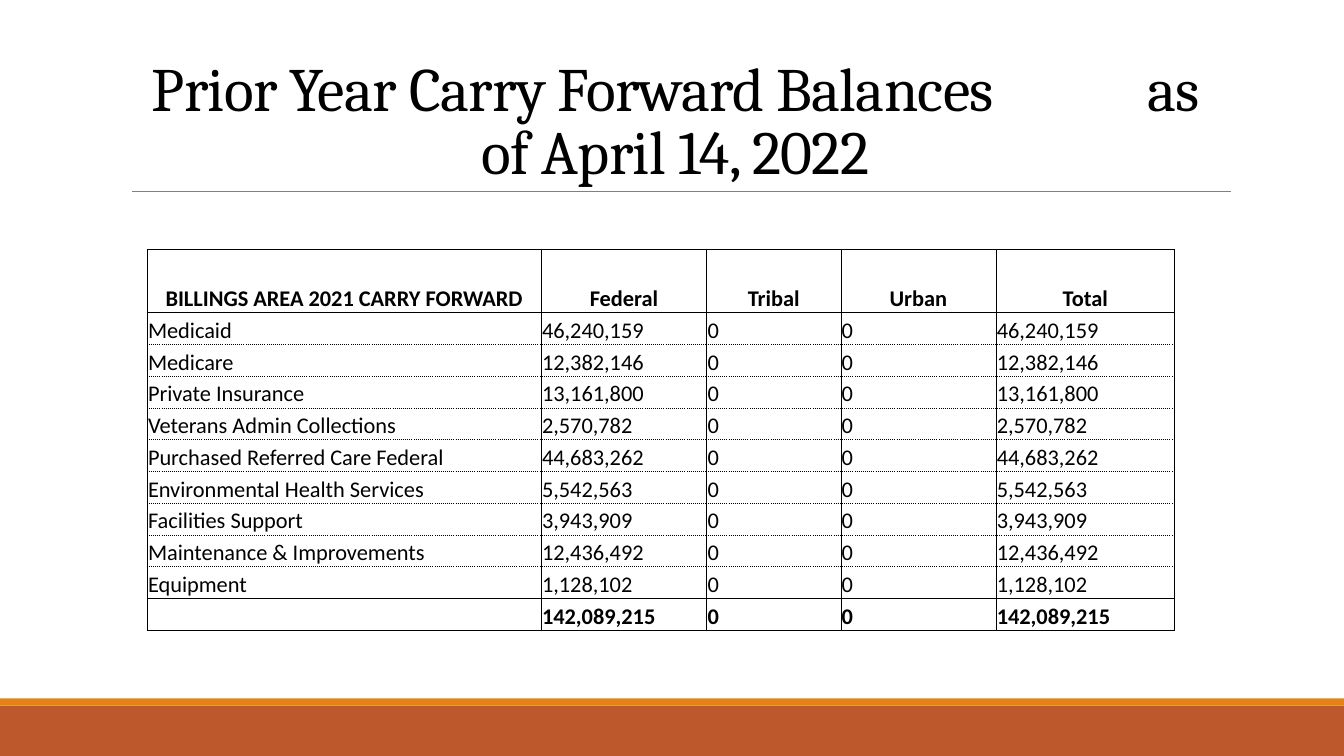
import pptx
import pptx.util
import pptx.dml.color
import pptx.enum.shapes
import pptx.enum.text
import pptx.oxml.ns
from dataclasses import dataclass
from lxml import etree

Cm = pptx.util.Cm
Pt = pptx.util.Pt
ALIGN = pptx.enum.text.PP_ALIGN
ANCHOR = pptx.enum.text.MSO_ANCHOR
qn = pptx.oxml.ns.qn


@dataclass(frozen=True)
class Theme:
    ink: str = "000000"
    rule: str = "808080"
    band: str = "BD582C"
    strip: str = "E48312"
    head: str = "Cambria"
    body: str = "Calibri"
    big: int = 44
    small: int = 16
    line: float = 0.5


THEME = Theme()
WIDE, HIGH = 33.87, 19.05
HEADS = ["BILLINGS AREA 2021 CARRY FORWARD", "Federal", "Tribal", "Urban", "Total"]
FUNDS = [
    ("Medicaid", 46240159),
    ("Medicare", 12382146),
    ("Private Insurance", 13161800),
    ("Veterans Admin Collections", 2570782),
    ("Purchased Referred Care Federal", 44683262),
    ("Environmental Health Services", 5542563),
    ("Facilities Support", 3943909),
    ("Maintenance & Improvements", 12436492),
    ("Equipment", 1128102),
]
SUM = 142089215
COLS = [9.93, 4.17, 3.38, 3.91, 4.5]
HEAD_ROW, ROW = 1.6, 0.8


def rgb(code):
    return pptx.dml.color.RGBColor.from_string(code)


def style(para, face, size, bold=False):
    font = para.font
    font.name, font.size, font.bold = face, Pt(size), bold
    font.color.rgb = rgb(THEME.ink)


def add_bar(slide, box, color):
    kind = pptx.enum.shapes.MSO_SHAPE.RECTANGLE
    bar = slide.shapes.add_shape(kind, *map(Cm, box))
    bar.shadow.inherit = False
    bar.fill.solid()
    bar.fill.fore_color.rgb = rgb(color)
    bar.line.fill.background()


def add_foot(slide, box):
    """Draw the wide band with the thin strip along its top."""
    left, top, width, height = box
    thin = 0.18
    add_bar(slide, (left, top + thin, width, height - thin), THEME.band)
    add_bar(slide, (left, top, width, thin), THEME.strip)


def add_title(slide, box):
    """Set the title at the bottom of the box, with a rule under it."""
    left, top, width, height = box
    frame = slide.shapes.add_textbox(*map(Cm, box)).text_frame
    frame.word_wrap = True
    frame.vertical_anchor = ANCHOR.BOTTOM
    para = frame.paragraphs[0]
    para.alignment = ALIGN.CENTER
    para.line_spacing = 0.85
    style(para, THEME.head, THEME.big)
    # One widely tracked space makes the gap before "as".
    parts = [("Prior Year Carry Forward Balances", -50), (" ", 10000),
             ("as of April 14, 2022", -50)]
    for text, track in parts:
        run = para.add_run()
        run.text = text
        run.font.size = Pt(THEME.big)
        run.font._element.set("spc", str(track))

    base = Cm(top + height)
    rule = slide.shapes.add_connector(
        pptx.enum.shapes.MSO_CONNECTOR.STRAIGHT,
        Cm(left + 0.28), base, Cm(left + width + 0.03), base)
    rule.line.color.rgb = rgb(THEME.rule)
    rule.line.width = Pt(THEME.line)
    etree.SubElement(rule._element.spPr, qn("a:effectLst"))


def set_edges(cell, dots):
    """Rule all four sides; those named in dots are dotted."""
    props = cell._tc.get_or_add_tcPr()
    for spot, side in enumerate("LRTB"):
        edge = etree.Element(qn("a:ln" + side), w=str(Pt(THEME.line)))
        fill = etree.SubElement(edge, qn("a:solidFill"))
        etree.SubElement(fill, qn("a:srgbClr"), val=THEME.ink)
        dash = "dot" if side in dots else "solid"
        etree.SubElement(edge, qn("a:prstDash"), val=dash)
        props.insert(spot, edge)


def fill_cell(cell, text, head, bold, dots):
    cell.fill.background()
    cell.margin_left = cell.margin_right = cell.margin_top = Cm(0.02)
    cell.margin_bottom = 0
    cell.vertical_anchor = ANCHOR.BOTTOM
    cell.text = text
    para = cell.text_frame.paragraphs[0]
    para.alignment = ALIGN.CENTER if head else ALIGN.LEFT
    style(para, THEME.body, THEME.small, bold)
    set_edges(cell, dots)


def add_funds(slide, left, top):
    sums = [(name, f"{cost:,}", "0", "0", f"{cost:,}")
            for name, cost in FUNDS + [("", SUM)]]
    rows = [HEADS] + sums
    last = len(rows) - 1
    high = HEAD_ROW + ROW * last
    shape = slide.shapes.add_table(
        len(rows), len(COLS), Cm(left), Cm(top), Cm(sum(COLS)), Cm(high))
    table = shape.table
    table.first_row = table.horz_banding = False
    for col, width in zip(table.columns, COLS):
        col.width = Cm(width)
    for r, row in enumerate(rows):
        table.rows[r].height = Cm(ROW if r else HEAD_ROW)
        dots = ("T" if 1 < r < last else "") + ("B" if 0 < r < last - 1 else "")
        for c, text in enumerate(row):
            fill_cell(table.cell(r, c), text, r == 0, r in (0, last), dots)


def main():
    deck = pptx.Presentation()
    deck.slide_width, deck.slide_height = Cm(WIDE), Cm(HIGH)
    slide = deck.slides.add_slide(deck.slide_layouts[6])
    add_foot(slide, (0, 17.6, WIDE, HIGH - 17.6))
    add_title(slide, (3.05, 0.79, 27.94, 4.04))
    add_funds(slide, 3.71, 6.28)
    deck.save("out.pptx")


if __name__ == "__main__":
    main()
